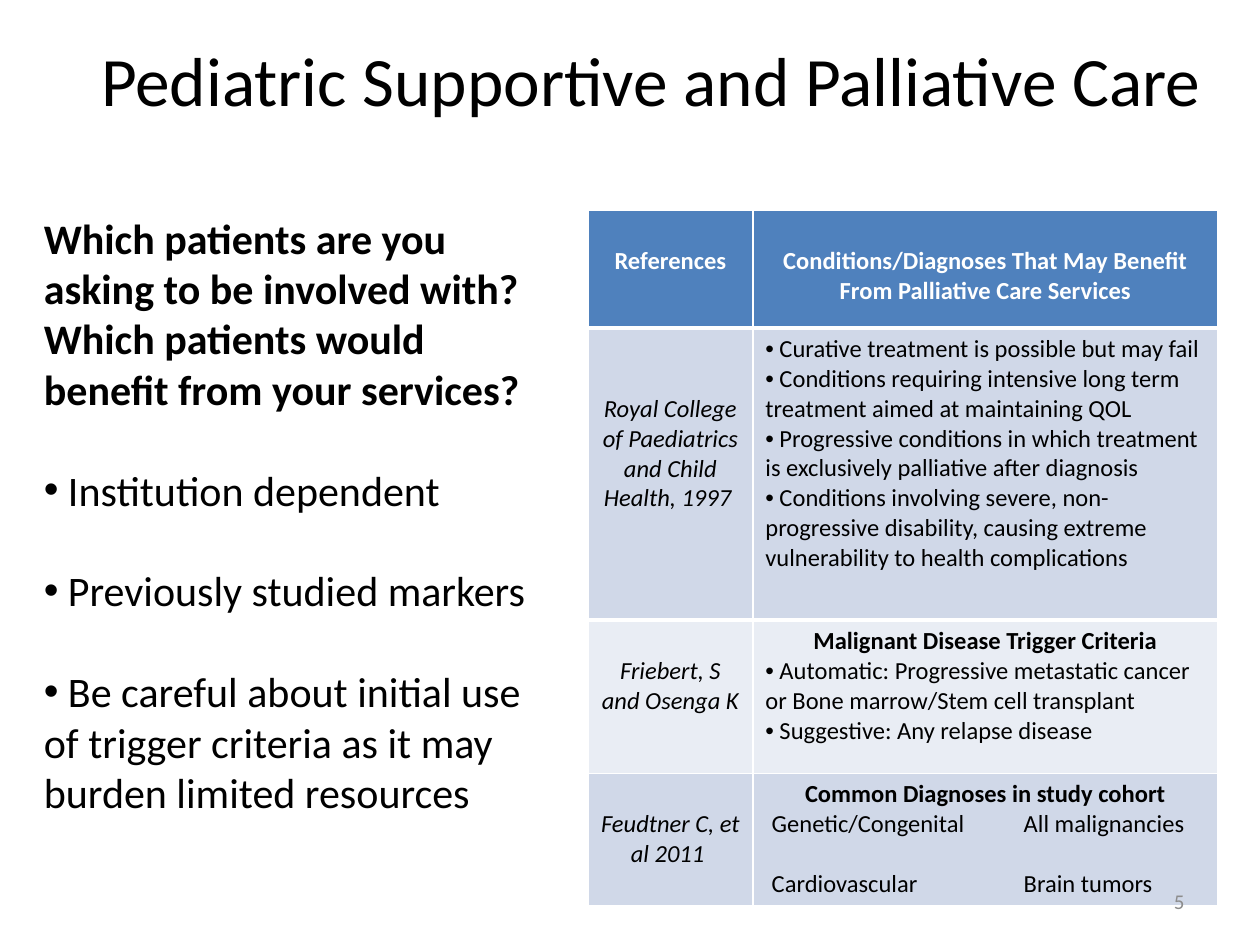
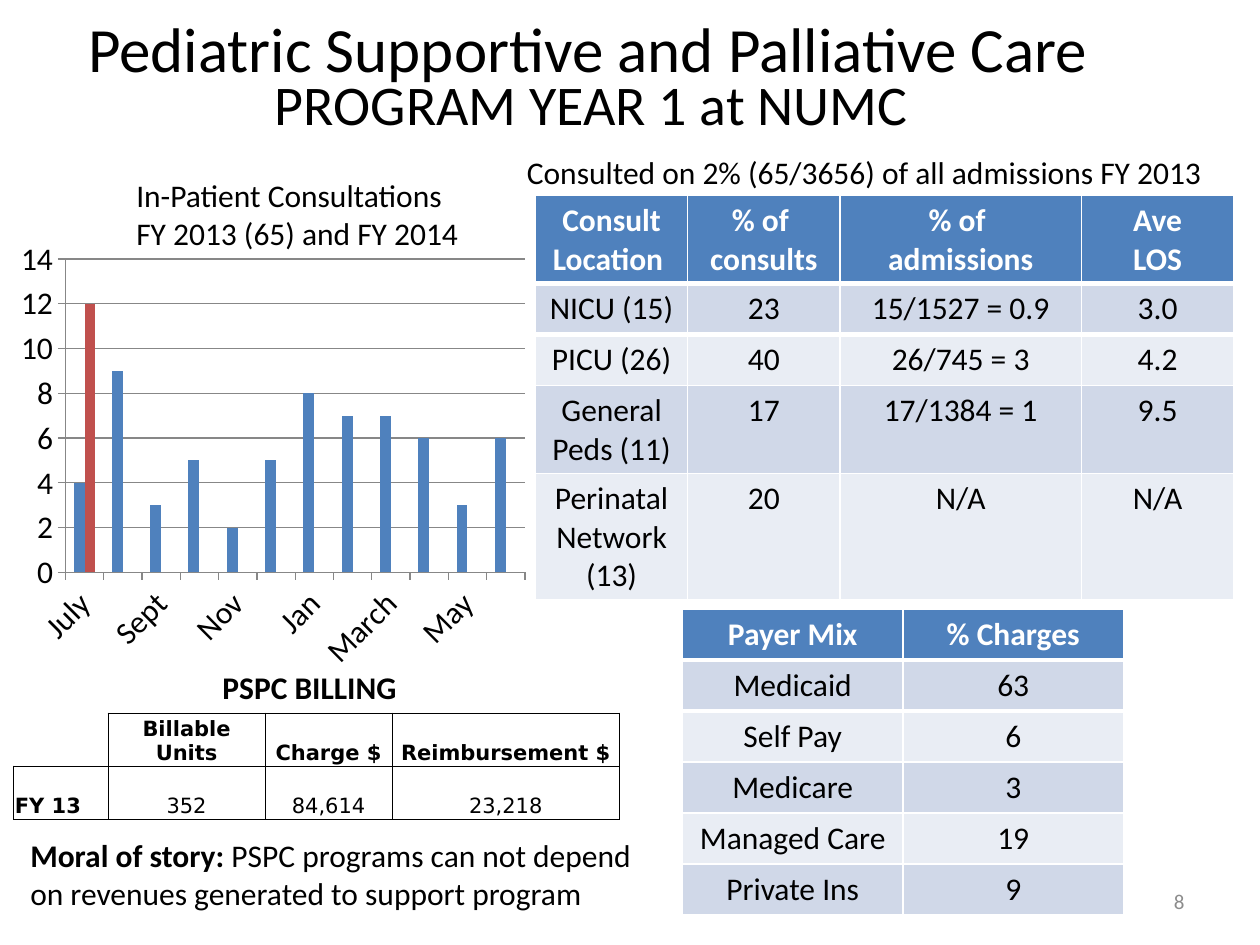
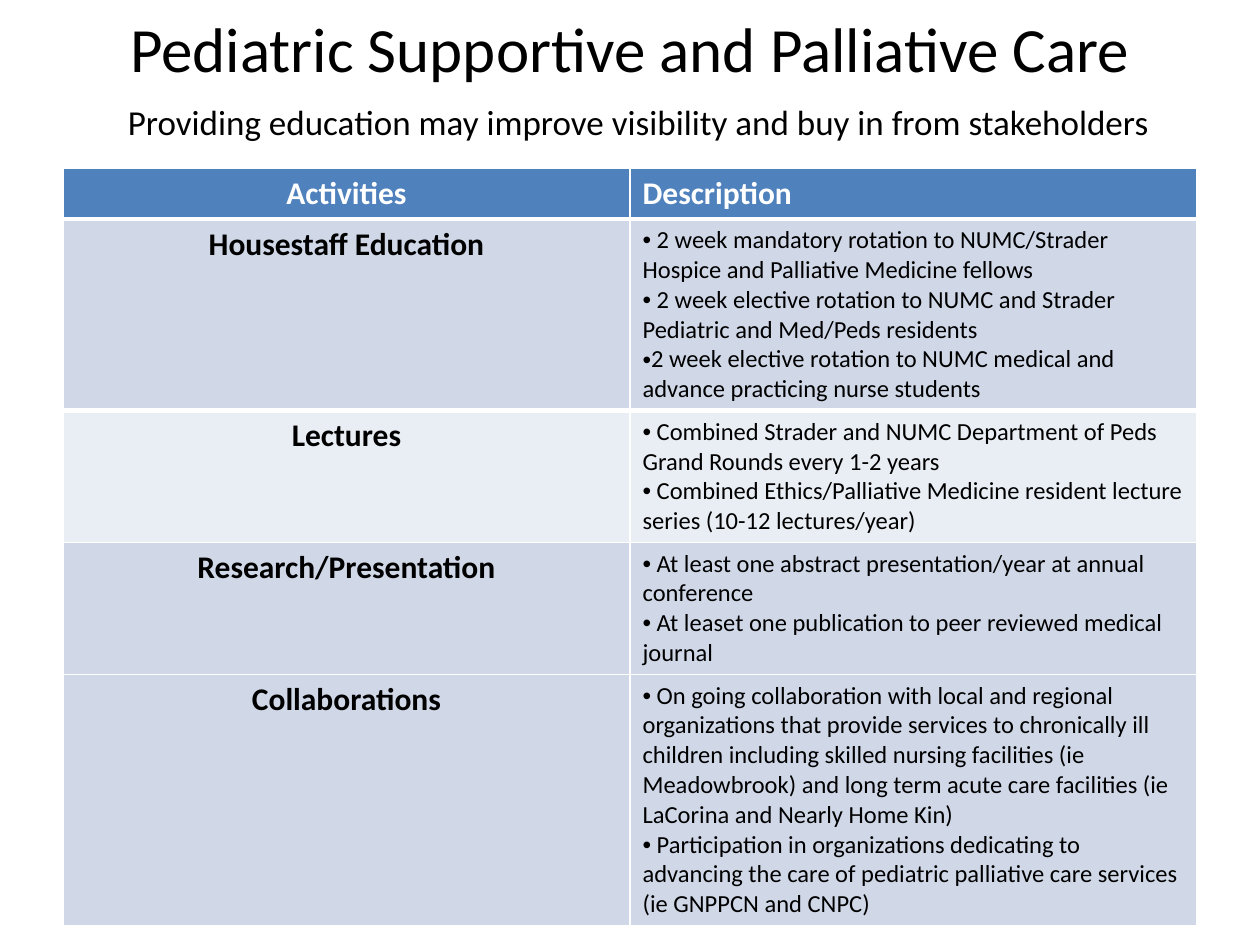
from itertools import cycle

from lxml.etree import SubElement
from pptx import Presentation
from pptx.chart.data import CategoryChartData
from pptx.dml.color import RGBColor
from pptx.enum.chart import XL_CHART_TYPE as ChartType, XL_TICK_MARK as Tick
from pptx.enum.text import MSO_ANCHOR as Anchor, MSO_AUTO_SIZE as AutoSize, PP_ALIGN as Align
from pptx.oxml.ns import qn
from pptx.util import Inches, Pt

COLORS = {
    "text": "000000", "white": "FFFFFF", "page_number": "8C8C8C",
    "header": "4F81BD", "band": "D0D8E8", "pale": "E9EDF4",
    "fy13": "4F81BD", "fy14": "C0504D", "unused": "9BBB59", "axis": "878787",
}
FONT = "Calibri"
WIDTH, HEIGHT = Inches(10), Inches(7.5)
GRID_COLUMNS = 120
UNIT = WIDTH / GRID_COLUMNS  # the grid is 120 columns by 90 square rows
TITLE = "Pediatric Supportive and Palliative Care"


def units(count):
    return round(count * UNIT)


def box(*cells):
    return [units(cell) for cell in cells]


def rgb(name):
    return RGBColor.from_string(COLORS[name])


def write(frame, lines, **style):
    """Fill a frame; a line is text or (text, overrides), ** toggles bold, a leading • is a bullet."""
    for number, line in enumerate([lines] if isinstance(lines, str) else lines):
        text, overrides = (line, {}) if isinstance(line, str) else line
        look = {"size": 18, "font": FONT, "color": "text", "bold": False, "italic": False,
                "align": Align.LEFT, "before": 0, "indent": 0} | style | overrides
        paragraph = frame.paragraphs[0] if number == 0 else frame.add_paragraph()
        paragraph.alignment = look["align"]
        paragraph.space_before = Pt(look["before"])
        properties = paragraph._p.get_or_add_pPr()
        properties.set("marL", str(units(look["indent"])))
        properties.set("indent", "0")
        if text.startswith("•"):
            text = text[1:]
            SubElement(properties, qn("a:buFont"), typeface="Arial")
            SubElement(properties, qn("a:buChar"), char="•")
        for part, words in enumerate(text.split("**")):
            if words:
                run = paragraph.add_run()
                run.text = words
                run.font.size, run.font.name = Pt(look["size"]), look["font"]
                run.font.bold = look["bold"] or part % 2 == 1
                run.font.italic = look["italic"]
                run.font.color.rgb = rgb(look["color"])


def add_text(slide, place, lines, anchor=Anchor.TOP, **style):
    frame = slide.shapes.add_textbox(*box(*place)).text_frame
    frame.word_wrap = True
    frame.vertical_anchor = anchor
    write(frame, lines, **style)


def add_titled_slide(deck, place, size):
    slide = deck.slides.add_slide(deck.slide_layouts[5])
    title = slide.shapes.title
    title.left, title.top, title.width, title.height = box(*place)
    title.text_frame.auto_size = AutoSize.NONE
    title.text_frame.vertical_anchor = Anchor.MIDDLE
    write(title.text_frame, TITLE, size=size, align=Align.CENTER)
    return slide


def add_page_number(slide, number):
    add_text(slide, (86, 83.4, 28, 4.8), number, anchor=Anchor.MIDDLE,
             size=12, color="page_number", align=Align.RIGHT)


def add_grid(slide, corner, widths, heights, rows):
    """Add a table of the given column widths and row heights and yield its cells with their text."""
    table = slide.shapes.add_table(len(rows), len(widths),
                                   *box(*corner, sum(widths), sum(heights))).table
    table.horz_banding = False
    for column, width in zip(table.columns, widths):
        column.width = units(width)
    for row, height in zip(table.rows, heights):
        row.height = units(height)
    for row, texts in enumerate(rows):
        for column, text in enumerate(texts):
            yield row, column, table.cell(row, column), text


def add_cell_border(cell, sides, color, width):
    properties = cell._tc.get_or_add_tcPr()
    for position, side in enumerate(sides):
        line = SubElement(properties, qn(f"a:ln{side}"), w=str(Pt(width)))
        fill = SubElement(line, qn("a:solidFill"))
        SubElement(fill, qn("a:srgbClr"), val=COLORS[color])
        properties.insert(position, line)


def add_banded_table(slide, corner, widths, heights, rows, column_styles=None,
                     header_styles=None, bands=("band", "pale"), blank_lines=None, size=18):
    """Add a table with a blue header; blank_lines maps (row, column) to lines left free above."""
    column_styles = column_styles or [{"align": Align.CENTER}] * len(widths)
    header_styles = header_styles or [{"align": Align.CENTER}] * len(widths)
    fills = ["header"] + [band for band, _ in zip(cycle(bands), rows[1:])]
    for row, column, cell, text in add_grid(slide, corner, widths, heights, rows):
        cell.fill.solid()
        cell.fill.fore_color.rgb = rgb(fills[row])
        free = (blank_lines or {}).get((row, column), 0)
        cell.margin_top = Inches(0.05) + round(free * Pt(size) * 1.22)
        if row < 2:
            add_cell_border(cell, "T" if row else "B", "white", 3)
        if row == 0:
            style = {"color": "white", "bold": True} | header_styles[column]
        else:
            style = column_styles[column]
        write(cell.text_frame, text, **({"size": size} | style))


def add_billing_table(slide):
    rows = [["", "Billable Units", "Charge $", "Reimbursement $"],
            ["FY 13", "352", "84,614", "23,218"]]
    for row, column, cell, text in add_grid(slide, (1.3, 67.9), (9, 14.95, 12.1, 21.65),
                                            (5.05, 5.05), rows):
        cell.fill.background()
        cell.vertical_anchor = Anchor.BOTTOM
        cell.margin_left = cell.margin_right = cell.margin_top = Inches(0.01)
        cell.margin_bottom = 0
        add_cell_border(cell, "LRTB" if text else "RB", "text", 0.5)
        write(cell.text_frame, text, size=12, font="DejaVu Sans", bold=row == 0 or column == 0,
              align=Align.CENTER if column else Align.LEFT)


def add_consultation_chart(slide):
    data = CategoryChartData()
    data.categories = ["July", "Aug", "Sept", "Oct", "Nov", "Dec",
                       "Jan", "Feb", "March", "April", "May", "June"]
    data.add_series("Series 1", [4, 9, 3, 5, 2, 5, 8, 7, 7, 6, 3, 6])
    data.add_series("Series 2", [12] + [None] * 11)
    data.add_series("Series 3", [])
    chart = slide.shapes.add_chart(ChartType.COLUMN_CLUSTERED, *box(1, 22, 50, 42.7), data).chart
    chart.has_legend = chart.has_title = False
    chart.font.size, chart.font.name = Pt(18), FONT
    chart.font.color.rgb = rgb("text")
    plot = chart.plots[0]
    plot.vary_by_categories = False
    plot.gap_width = 150
    for series, color in zip(plot.series, ("fy13", "fy14", "unused")):
        series.format.fill.solid()
        series.format.fill.fore_color.rgb = rgb(color)
    # Without a value element the empty series takes no room beside the columns.
    empty = plot.series[2]._element
    empty.remove(empty.find(qn("c:val")))
    for axis in (chart.category_axis, chart.value_axis):
        axis.major_tick_mark = Tick.OUTSIDE
        axis.format.line.color.rgb = rgb("axis")
    chart.value_axis.has_major_gridlines = True
    chart.value_axis.major_gridlines.format.line.color.rgb = rgb("axis")


def heading(text):
    return text, {"bold": True, "align": Align.CENTER}


def build_patients_slide(deck):
    slide = add_titled_slide(deck, (6, 0, 112, 15), 39.6)
    rows = [
        ["References", "Conditions/Diagnoses That May Benefit From Palliative Care Services"],
        ["Royal College of Paediatrics and Child Health, 1997 ", [
            "• Curative treatment is possible but may fail",
            "• Conditions requiring intensive long term treatment aimed at maintaining QOL",
            "• Progressive conditions in which treatment is exclusively palliative after diagnosis",
            "• Conditions involving severe, non-progressive disability, causing extreme "
            "vulnerability to health complications"]],
        ["Friebert, S and Osenga K", [
            heading("Malignant Disease Trigger Criteria"),
            "• Automatic: Progressive metastatic cancer or Bone marrow/Stem cell transplant",
            "• Suggestive: Any relapse disease"]],
        ["Feudtner C, et al 2011 ", [
            heading("Common Diagnoses in study cohort"),
            ("Genetic/Congenital\tAll malignancies", {"indent": 0.6}),
            ("Cardiovascular\t\tBrain tumors", {"indent": 0.6, "before": 17})]],
    ]
    add_banded_table(slide, (56, 20), (15.7, 44.3), (11.25, 27.8, 14.6, 12.6), rows, size=14,
                     column_styles=[{"align": Align.CENTER, "italic": True}, {}],
                     blank_lines={(0, 0): 1, (0, 1): 1, (1, 0): 2, (2, 0): 1, (3, 0): 1})
    add_page_number(slide, "5")
    add_text(slide, (3, 19.6, 49, 59.4), [
        "**Which patients are you asking to be involved with? "
        "Which patients would benefit from your services?**",
        *[(point, {"before": 28.8}) for point in (
            "• Institution dependent",
            "• Previously studied markers",
            "• Be careful about initial use of trigger criteria as it may burden limited resources")],
    ], size=24)


def build_program_year_slide(deck):
    slide = add_titled_slide(deck, (2, 0, 108, 9), 36)
    add_text(slide, (25, 6, 71, 7.7), "PROGRAM YEAR 1 at NUMC", size=32)
    add_text(slide, (49, 14, 71, 4.8), "Consulted on 2% (65/3656) of all admissions FY 2013")
    add_page_number(slide, "8")
    add_consultation_chart(slide)
    add_text(slide, (11.8, 16.2, 36, 8.5), ["In-Patient Consultations", "FY 2013 (65) and FY 2014"])
    add_text(slide, (20, 63, 28, 4.8), "**PSPC BILLING**")
    add_billing_table(slide)
    add_text(slide, (1.7, 79, 63, 8.5), ["**Moral of story:** PSPC programs can not depend",
                                         "on revenues generated to support program"])
    payers = [["Payer Mix", "% Charges"], ["Medicaid", "63"], ["Self Pay", "6"],
              ["Medicare", "3"], ["Managed Care", "19"], ["Private Ins", "9"]]
    add_banded_table(slide, (65, 58), (21, 21), [4.86] * len(payers), payers)
    locations = [
        ["Consult Location ", ["% of ", "consults"], ["% of ", "admissions"], ["Ave", "LOS"]],
        ["NICU (15)", "23", "15/1527 = 0.9", "3.0"],
        ["PICU (26)", "40", "26/745 = 3", "4.2"],
        ["General Peds (11)", "17", "17/1384 = 1", "9.5"],
        ["Perinatal Network (13)", "20", "N/A", "N/A"],
    ]
    add_banded_table(slide, (51, 18.6), (14.5, 14.5, 23, 14.5), (8.3, 4.85, 4.85, 8.3, 12),
                     locations)


def build_education_slide(deck):
    slide = add_titled_slide(deck, (6, 0, 108, 9), 36)
    rows = [
        ["Activities", "Description"],
        ["Housestaff Education", [
            "• 2 week mandatory rotation to NUMC/Strader Hospice and Palliative Medicine fellows",
            "• 2 week elective rotation to NUMC and Strader Pediatric and Med/Peds residents",
            "•2 week elective rotation to NUMC medical and advance practicing nurse students"]],
        ["Lectures", [
            "• Combined Strader and NUMC Department of Peds Grand Rounds every 1-2 years",
            "• Combined Ethics/Palliative Medicine resident lecture series (10-12 lectures/year)"]],
        ["Research/Presentation", [
            "• At least one abstract presentation/year at annual conference",
            "• At leaset one publication to peer reviewed medical journal"]],
        ["Collaborations", [
            "• On going collaboration with local and regional organizations that provide services "
            "to chronically ill children including skilled nursing facilities (ie Meadowbrook) "
            "and long term acute care facilities (ie LaCorina and Nearly Home Kin)",
            "• Participation in organizations dedicating to advancing the care of pediatric "
            "palliative care services (ie GNPPCN and CNPC)"]],
    ]
    add_banded_table(slide, (6, 16), (54, 54), (4.86, 18.15, 12.55, 12.55, 23.9), rows,
                     column_styles=[{"align": Align.CENTER, "bold": True}, {"size": 14}],
                     header_styles=[{"align": Align.CENTER}, {}],
                     bands=("band", "pale", "band", "band"))
    add_text(slide, (11, 9, 103, 5.3),
             "Providing education may improve visibility and buy in from stakeholders", size=20)


def main():
    deck = Presentation()
    deck.slide_width, deck.slide_height = WIDTH, HEIGHT
    build_patients_slide(deck)
    build_program_year_slide(deck)
    build_education_slide(deck)
    deck.save("out.pptx")


if __name__ == "__main__":
    main()
